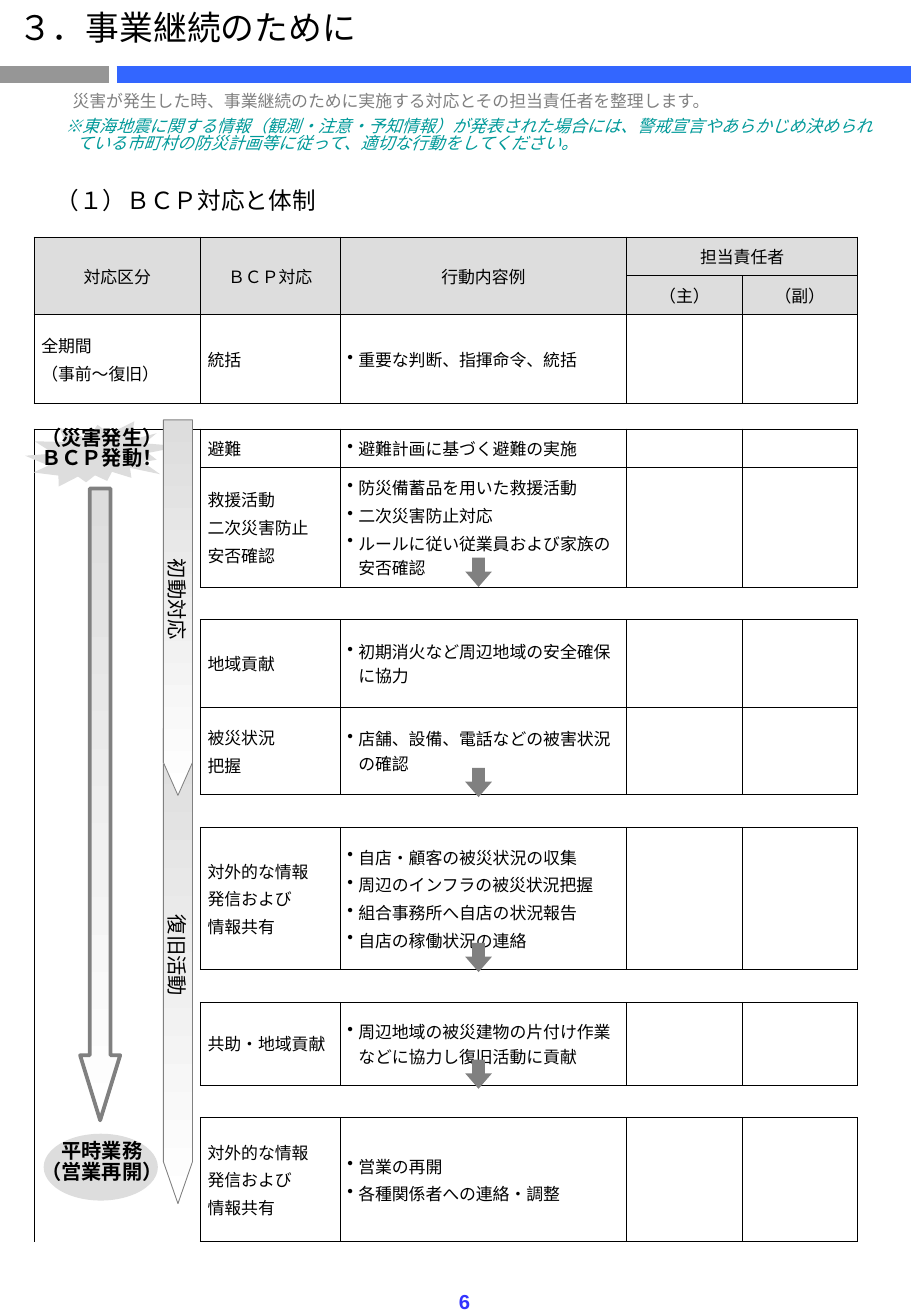
from lxml.etree import SubElement
from pptx import Presentation
from pptx.dml.color import RGBColor
from pptx.enum.shapes import MSO_CONNECTOR, MSO_SHAPE
from pptx.enum.text import MSO_ANCHOR, PP_ALIGN
from pptx.oxml.ns import qn
from pptx.util import Inches, Pt

COLORS = {"black": "000000", "gray": "808080", "rule": "969696", "blue": "3366FF",
          "number": "3333FF", "teal": "009999", "pale": "DDDDDD", "white": "FFFFFF"}
RGB = {name: RGBColor.from_string(value) for name, value in COLORS.items()}
CJK = "Noto Sans CJK JP"


def write(frame, lines, size=10, color="black", font="Arial", bold=None, italic=None,
          align=PP_ALIGN.LEFT, spacing=None, before=0, bullet=False, left=0, hanging=0):
    for i, line in enumerate(lines):
        paragraph = frame.paragraphs[0] if i == 0 else frame.add_paragraph()
        paragraph.alignment = align
        paragraph.space_before = Pt(before if i or bullet else 0)
        if spacing:
            paragraph.line_spacing = spacing
        properties = paragraph._p.get_or_add_pPr()
        properties.set("marL", str(Inches(left)))
        properties.set("indent", str(-Inches(hanging)))
        if bullet:
            SubElement(properties, qn("a:buChar")).set("char", "•")
        if not line:
            SubElement(paragraph._p, qn("a:endParaRPr")).set("sz", str(size * 100))
            continue
        run = paragraph.add_run()
        run.text = line
        run.font.size, run.font.bold, run.font.italic = Pt(size), bold, italic
        run.font.color.rgb = RGB[color]
        run.font.name = font
        SubElement(run._r.get_or_add_rPr(), qn("a:ea")).set("typeface", CJK)


def add_plain_shape(kind, box, adjustments=(), fill="pale", line=None, angle=None):
    """Add a shape with a solid fill, or a pale-to-white gradient when angle is given."""
    shape = slide.shapes.add_shape(kind, *map(Inches, box))
    shape.shadow.inherit = False
    for i, value in enumerate(adjustments):
        shape.adjustments[i] = value
    if angle is None:
        shape.fill.solid()
        shape.fill.fore_color.rgb = RGB[fill]
    else:
        shape.fill.gradient()
        shape.fill.gradient_angle = angle
        for stop, color in zip(shape.fill.gradient_stops, ("pale", "white")):
            stop.color.rgb = RGB[color]
    if line:
        shape.line.color.rgb = RGB["gray"]
        shape.line.width = Pt(line)
    else:
        shape.line.fill.background()
    return shape


deck = Presentation()
deck.slide_width, deck.slide_height = Inches(7.5), Inches(10.83)
slide = deck.slides.add_slide(deck.slide_layouts[5])

# Title and the two-part rule below it
title = slide.shapes.title
title.left, title.top, title.width, title.height = map(Inches, (0.05, 0.06, 3.31, 0.43))
title.text_frame.vertical_anchor = MSO_ANCHOR.TOP
write(title.text_frame, ["３．事業継続のために"], size=20, font=CJK, spacing=0.85)

for start, end, color in ((0, 0.9, "rule"), (0.96, 7.5, "blue")):
    rule = slide.shapes.add_connector(MSO_CONNECTOR.STRAIGHT, Inches(start), Inches(0.61),
                                      Inches(end), Inches(0.61))
    rule.line.color.rgb = RGB[color]
    rule.line.width = Pt(10)
    SubElement(rule._element.spPr, qn("a:effectLst"))

# Response table: (height, response, actions); a row without a response is a gap
COLUMNS = (1.37, 1.15, 2.36, 0.95, 0.95)
ROWS = [
    (0.32, ["ＢＣＰ対応"], ["行動内容例"]),
    (0.32, [""], [""]),
    (0.73, ["統括"], ["重要な判断、指揮命令、統括"]),
    (0.21, None, None),
    (0.31, ["避難"], ["避難計画に基づく避難の実施"]),
    (0.98, ["救援活動", "二次災害防止", "安否確認"],
     ["防災備蓄品を用いた救援活動", "二次災害防止対応", "ルールに従い従業員および家族の安否確認"]),
    (0.27, None, None),
    (0.72, ["地域貢献"], ["初期消火など周辺地域の安全確保に協力"]),
    (0.72, ["被災状況", "把握"], ["店舗、設備、電話などの被害状況の確認"]),
    (0.27, None, None),
    (1.17, ["対外的な情報", "発信および", "情報共有"],
     ["自店・顧客の被災状況の収集", "周辺のインフラの被災状況把握",
      "組合事務所へ自店の状況報告", "自店の稼働状況の連絡"]),
    (0.27, None, None),
    (0.68, ["共助・地域貢献"], ["周辺地域の被災建物の片付け作業などに協力し復旧活動に貢献"]),
    (0.27, None, None),
    (1.02, ["対外的な情報", "発信および", "情報共有"], ["営業の再開", "各種関係者への連絡・調整"]),
]
OTHER_CELLS = {(0, 0): ["対応区分"], (0, 3): ["担当責任者"], (1, 3): ["（主）"], (1, 4): ["（副）"],
               (2, 0): ["全期間", "（事前～復旧）"]}
FIRST_PHASE_ROW, LAST_ROW = 4, len(ROWS) - 1

heights = [row[0] for row in ROWS]
table = slide.shapes.add_table(len(ROWS), len(COLUMNS), Inches(0.28), Inches(1.95),
                               Inches(sum(COLUMNS)), Inches(sum(heights))).table
table.first_row = table.horz_banding = False
for column, width in zip(table.columns, COLUMNS):
    column.width = Inches(width)

for r, (height, response, actions) in enumerate(ROWS):
    table.rows[r].height = Inches(height)
    header, gap = r < 2, response is None
    for c in range(len(COLUMNS)):
        cell = table.cell(r, c)
        if c == 0 and r >= FIRST_PHASE_ROW:
            sides = "LR" + "T" * (r == FIRST_PHASE_ROW) + "B" * (r == LAST_ROW)
        elif gap:
            sides = "TB"
        elif header and c < 3:
            sides = "LRT" if r == 0 else "LRB"
        else:
            sides = "LRTB"
        properties = cell._tc.get_or_add_tcPr()
        for side in "LRTB":
            border = SubElement(properties, qn(f"a:ln{side}"), w=str(Pt(0.5)))
            if side in sides:
                paint = SubElement(border, qn("a:solidFill"))
                SubElement(paint, qn("a:srgbClr"), val=COLORS["black"])
            else:
                SubElement(border, qn("a:noFill"))
        if header:
            cell.fill.solid()
            cell.fill.fore_color.rgb = RGB["pale"]
        else:
            cell.fill.background()
        cell.vertical_anchor = MSO_ANCHOR.MIDDLE
        inset = Inches(0 if gap else 0.06)
        cell.margin_left = cell.margin_right = cell.margin_top = cell.margin_bottom = inset

        lines = {1: response, 2: actions}.get(c) or OTHER_CELLS.get((r, c), [""])
        bulleted = c == 2 and not header and not gap
        write(cell.text_frame, lines, size=6 if gap else 10, before=2, bullet=bulleted,
              left=0.09 * bulleted, hanging=0.09 * bulleted,
              align=PP_ALIGN.CENTER if header else PP_ALIGN.LEFT)

MERGES = [((0, c), (1, c)) for c in range(3)]
MERGES += [((0, 3), (0, 4)), ((3, 0), (3, 4)), ((FIRST_PHASE_ROW, 0), (LAST_ROW, 0))]
for first, last in MERGES:
    table.cell(*first).merge(table.cell(*last))

# Arrows between steps, start and finish marks, and the time line
for top in (4.59, 6.32, 7.76, 8.72):
    add_plain_shape(MSO_SHAPE.DOWN_ARROW, (3.83, top, 0.22, 0.24), (0.472, 0.576), fill="gray")
add_plain_shape(MSO_SHAPE.OVAL, (0.36, 9.33, 0.94, 0.55))
burst = add_plain_shape(MSO_SHAPE.EXPLOSION2, (0.21, 3.45, 1.28, 0.58))
burst.rotation = 4
add_plain_shape(MSO_SHAPE.DOWN_ARROW, (0.66, 4.02, 0.33, 5.2), (0.514, 1.623),
                line=2.25, angle=270)

for phase, box, point in (("復旧活動", (-0.49, 7.83, 3.91, 0.24), 1.438),
                          ("初動対応", (-0.08, 4.88, 3.09, 0.24), 1.129)):
    band = add_plain_shape(MSO_SHAPE.PENTAGON, box, (point,), line=0.5, angle=0)
    band.rotation = 90
    frame = band.text_frame
    frame.margin_left = frame.margin_right = frame.margin_top = frame.margin_bottom = 0
    frame.vertical_anchor = MSO_ANCHOR.MIDDLE
    frame.word_wrap = False
    write(frame, [phase], size=12, align=PP_ALIGN.CENTER)

# Free text
mark = dict(size=12, bold=True, align=PP_ALIGN.CENTER, spacing=0.85)
TEXTS = [
    ((0.36, 0.72, 6.77, 0.35), ["災害が発生した時、事業継続のために実施する対応とその担当責任者を整理します。"],
     dict(color="gray", font=CJK, spacing=0.85, left=0.14)),
    ((0.36, 1.52, 6.77, 0.35), ["（１）ＢＣＰ対応と体制"], dict(size=14, spacing=0.85)),
    ((0.44, 0.93, 6.9, 0.43),
     ["※東海地震に関する情報（観測・注意・予知情報）が発表された場合には、警戒宣言や"
      "あらかじめ決められている市町村の防災計画等に従って、適切な行動をしてください。"],
     dict(color="teal", italic=True, spacing=0.85, left=0.09, hanging=0.09)),
    ((0.21, 3.48, 1.26, 0.5), ["（災害発生）", "ＢＣＰ発動！"], dict(mark, font=CJK)),
    ((0.24, 9.35, 1.2, 0.5), ["平時業務", "（営業再開）"], mark),
    ((3.63, 10.56, 0.39, 0.3), ["6"],
     dict(size=12, color="number", bold=True, align=PP_ALIGN.CENTER)),
]
for box, lines, style in TEXTS:
    frame = slide.shapes.add_textbox(*map(Inches, box)).text_frame
    frame.word_wrap = True
    write(frame, lines, **style)

deck.save("out.pptx")
